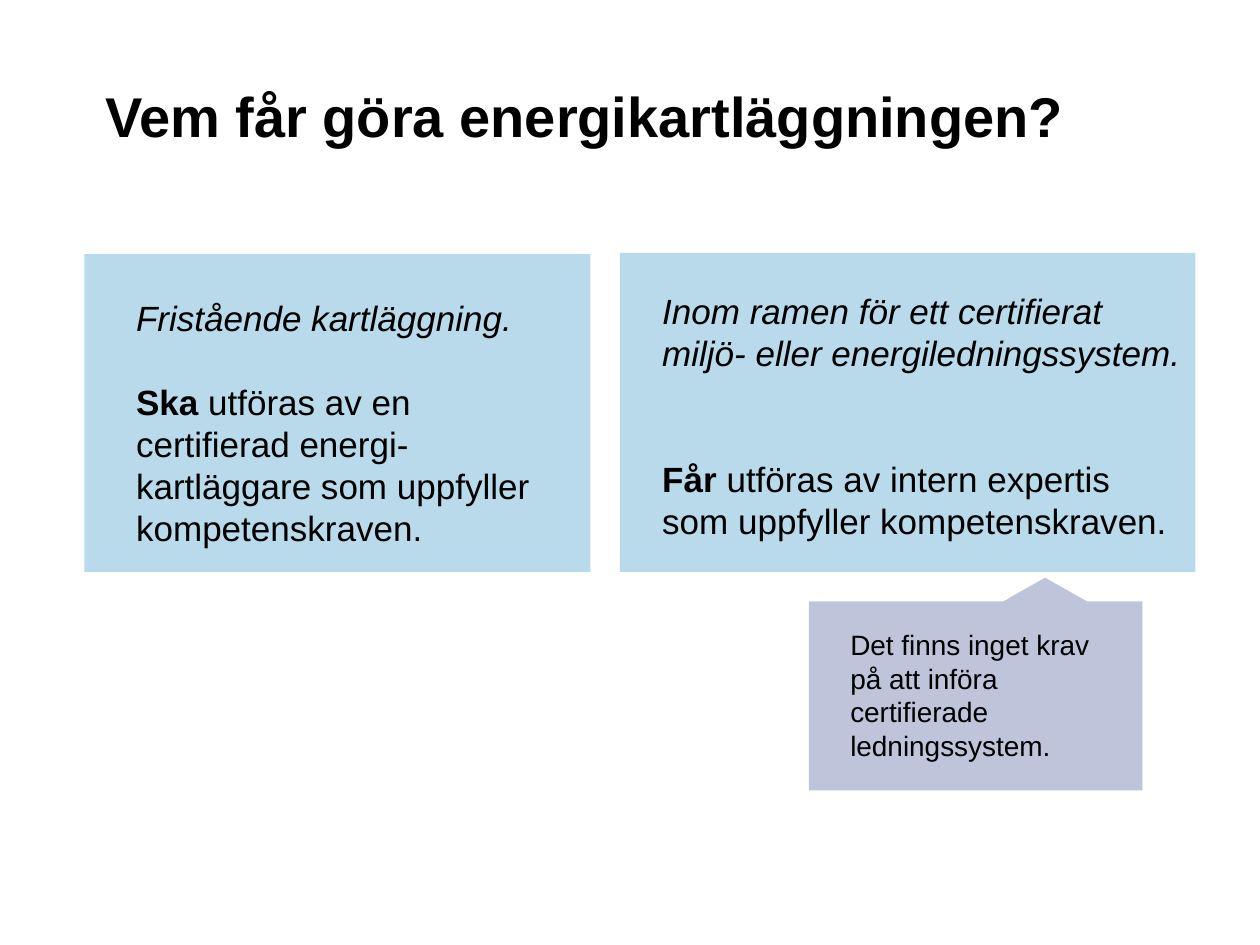
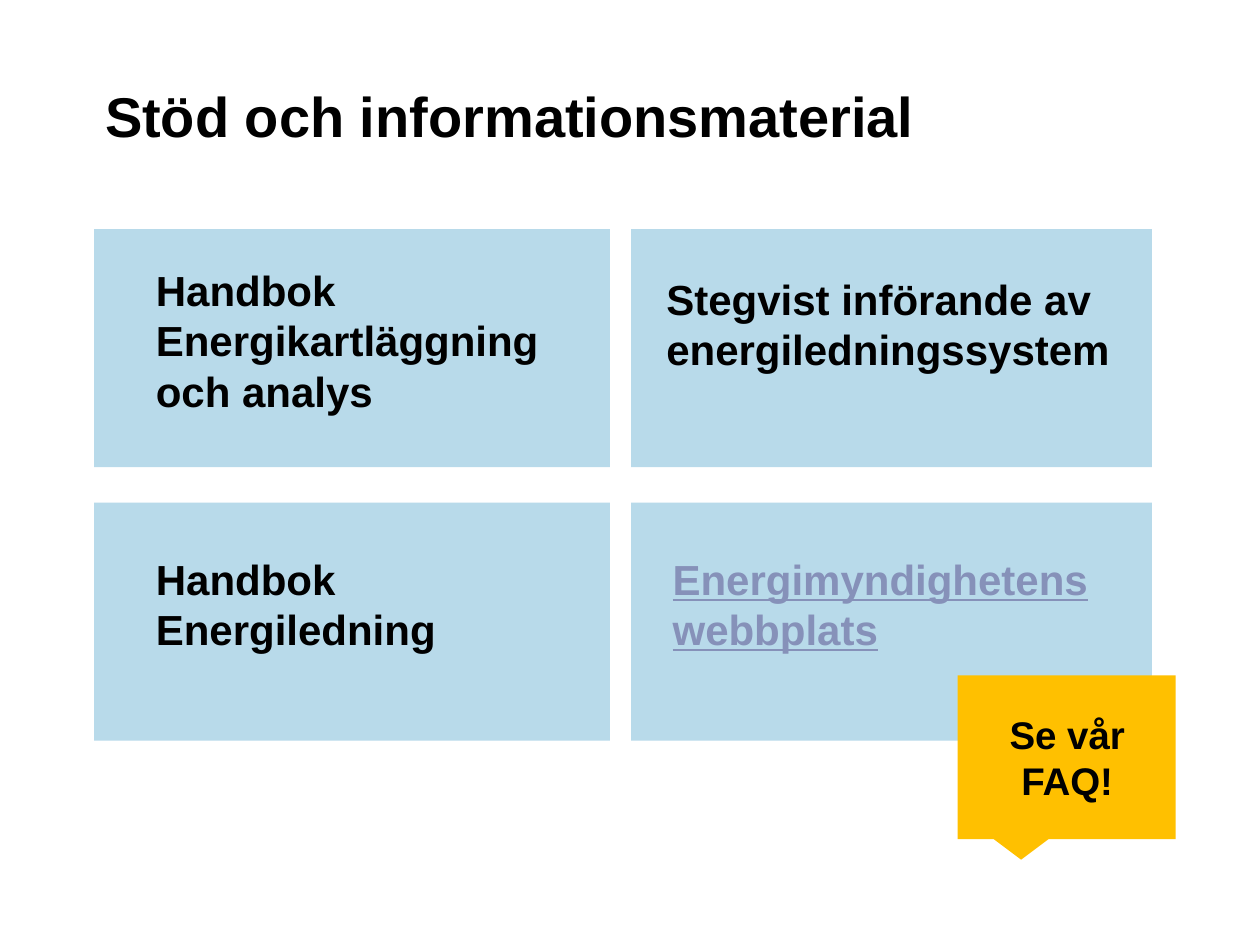
"""Build two slides on who may do an energy audit and what support exists."""
import pptx
import pptx.util
import pptx.dml.color
import pptx.enum.shapes
import pptx.enum.text

Pt = pptx.util.Pt
RGBColor = pptx.dml.color.RGBColor
MSO_SHAPE = pptx.enum.shapes.MSO_SHAPE
PP_ALIGN = pptx.enum.text.PP_ALIGN

BLACK = RGBColor(0x00, 0x00, 0x00)
PANEL = RGBColor(0xB8, 0xDA, 0xEA)
NOTE = RGBColor(0xBE, 0xC5, 0xDA)
LINK = RGBColor(0x86, 0x91, 0xB9)
YELLOW = RGBColor(0xFF, 0xC0, 0x00)
FONT = "Arial"


def add_block(s, kind, box, fill):
    sp = s.shapes.add_shape(kind, *[Pt(v) for v in box])
    sp.shadow.inherit = False
    sp.fill.solid()
    sp.fill.fore_color.rgb = fill
    sp.line.fill.background()
    return sp


def add_text(s, box, size, paragraphs, color=BLACK, leading=1.2, gap=0):
    tf = s.shapes.add_textbox(*[Pt(v) for v in box]).text_frame
    tf.word_wrap = True
    for i, runs in enumerate(paragraphs):
        p = tf.add_paragraph() if i else tf.paragraphs[0]
        p.line_spacing = Pt(size * leading)
        if i:
            p.space_before = Pt(gap)
        for text, style in runs:
            r = p.add_run()
            r.text = text
            r.font.name = FONT
            r.font.size = Pt(size)
            r.font.color.rgb = color
            r.font.bold = "b" in style
            r.font.italic = "i" in style
            r.font.underline = "u" in style
    return tf


prs = pptx.Presentation()
prs.slide_width, prs.slide_height = Pt(720), Pt(540)

slides = []
for title in ("Vem får göra energikartläggningen?", "Stöd och informationsmaterial"):
    s = prs.slides.add_slide(prs.slide_layouts[6])
    tf = add_text(s, (60, 44.8, 600, 77.6), 32, [[(title, "b")]], leading=1.25)
    tf.margin_left = tf.margin_top = tf.margin_right = tf.margin_bottom = 0
    slides.append(s)
who, support = slides

for box in ((48.2, 145.2, 289.2, 181.6), (354.2, 144.6, 329, 182.2)):
    add_block(who, MSO_SHAPE.RECTANGLE, box, PANEL)

add_text(who, (70.7, 165.6, 254.9, 152.6), 20, [
    [("Fristående kartläggning.", "i")],
    [("Ska", "b"), (" utföras av en certifierad energi-kartläggare som uppfyller kompetenskraven.", "")],
], gap=24)
add_text(who, (371.3, 162, 312, 154.8), 20, [
    [("Inom ramen för ett certifierat miljö- eller energiledningssystem.", "i")],
    [("Får ", "b"), ("utföras av intern expertis som uppfyller kompetenskraven.", "")],
], gap=48)

note = add_block(who, MSO_SHAPE.RECTANGULAR_CALLOUT, (462.2, 343.6, 190.6, 108), NOTE)
note.rotation = 180
add_text(who, (478.8, 355, 156.2, 108.7), 16,
         [[("Det finns inget krav på att införa certifierade ledningssystem.", "")]])

for top in (131, 287.2):
    for left, width in ((53.8, 294.8), (360.7, 297.5)):
        add_block(support, MSO_SHAPE.RECTANGLE, (left, top, width, 136), PANEL)

for text, box, style, color in (
    ("Handbok Energikartläggning och analys", (82, 147.6, 254.9, 123.8), "b", BLACK),
    ("Handbok Energiledning", (82, 312.5, 254.9, 94.3), "b", BLACK),
    ("Stegvist införande av energiledningssystem", (373.7, 152.6, 280.8, 94.3), "b", BLACK),
    ("Energimyndighetens webbplats", (377.3, 312.5, 254.9, 65.5), "bu", LINK),
):
    add_text(support, box, 24, [[(text, style)]], color)

add_block(support, MSO_SHAPE.RECTANGULAR_CALLOUT, (547.2, 386, 124.6, 93.6), YELLOW)
tf = add_text(support, (561.6, 402.5, 96.5, 60.5), 22, [[("Se vår FAQ!", "b")]])
tf.paragraphs[0].alignment = PP_ALIGN.CENTER

prs.save("out.pptx")
